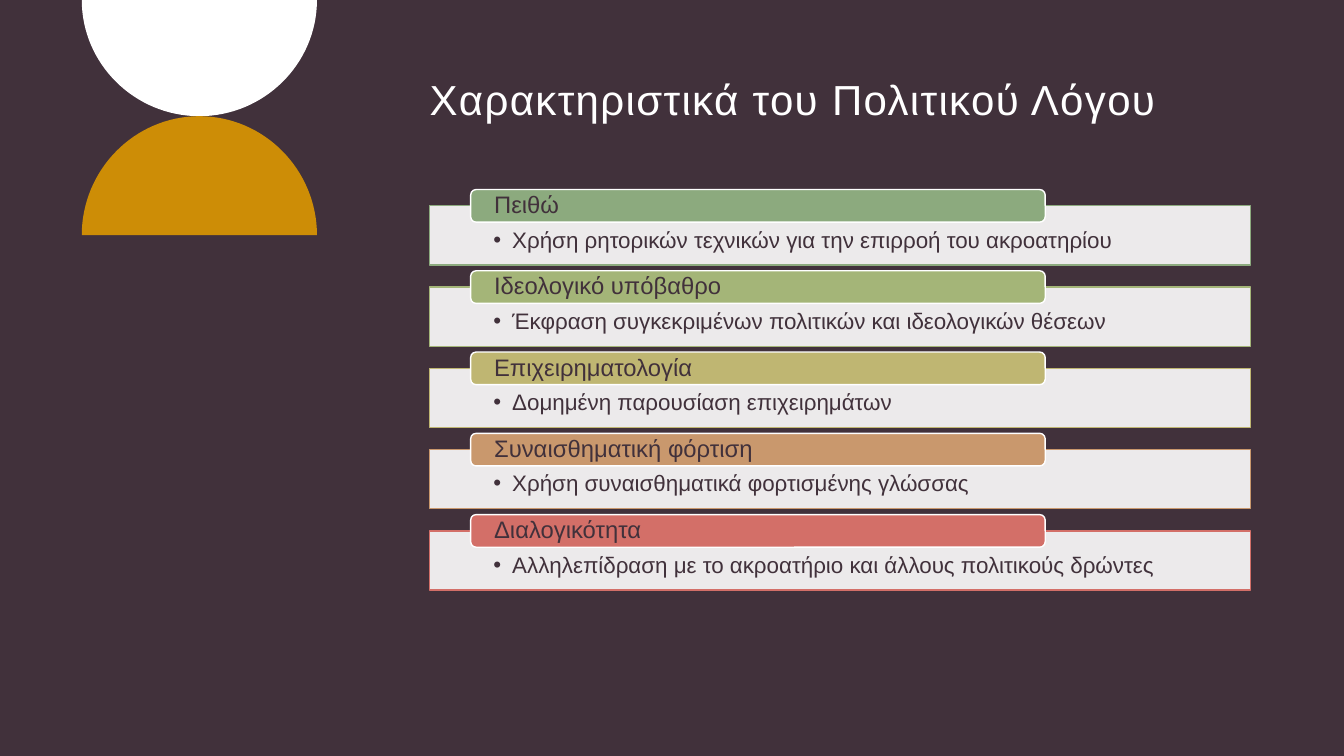
from lxml import etree
from pptx import Presentation
from pptx.dml.color import RGBColor
from pptx.enum.shapes import MSO_SHAPE
from pptx.enum.text import MSO_ANCHOR, MSO_AUTO_SIZE, PP_ALIGN
from pptx.oxml.ns import qn
from pptx.util import Pt

RECTANGLE = MSO_SHAPE.RECTANGLE
ROUNDED = MSO_SHAPE.ROUNDED_RECTANGLE
TOP = MSO_ANCHOR.TOP
MIDDLE = MSO_ANCHOR.MIDDLE
LEFT = PP_ALIGN.LEFT
NO_AUTOFIT = MSO_AUTO_SIZE.NONE

FONT = "Arial"
COLORS = {
    "plum": "41313B",
    "white": "FFFFFF",
    "gold": "CD8D06",
    "green": "8CAA7E",
    "olive": "A4B578",
    "sand": "BFB672",
    "copper": "C9986D",
    "coral": "D36F68",
}
TITLE = "Χαρακτηριστικά του Πολιτικού Λόγου"
FEATURES = [
    ("Πειθώ", "Χρήση ρητορικών τεχνικών για την επιρροή του ακροατηρίου", "green"),
    ("Ιδεολογικό υπόβαθρο", "Έκφραση συγκεκριμένων πολιτικών και ιδεολογικών θέσεων", "olive"),
    ("Επιχειρηματολογία", "Δομημένη παρουσίαση επιχειρημάτων", "sand"),
    ("Συναισθηματική φόρτιση", "Χρήση συναισθηματικά φορτισμένης γλώσσας", "copper"),
    ("Διαλογικότητα", "Αλληλεπίδραση με το ακροατήριο και άλλους πολιτικούς δρώντες", "coral"),
]


def color(name):
    """Return the named palette colour."""
    return RGBColor.from_string(COLORS[name])


def paint(shape, fill, line=None):
    """Give a shape a solid fill, an optional outline and no shadow."""
    shape.shadow.inherit = False
    shape.fill.solid()
    shape.fill.fore_color.rgb = color(fill)
    if line:
        shape.line.color.rgb = color(line)
        shape.line.width = Pt(1)
    else:
        shape.line.fill.background()


def write(shape, text, size, ink, anchor, margins):
    """Set one left-aligned paragraph in a shape and return it."""
    frame = shape.text_frame
    frame.text = text
    frame.word_wrap = True
    frame.auto_size = NO_AUTOFIT
    frame.vertical_anchor = anchor
    frame.margin_left, frame.margin_top, frame.margin_right, frame.margin_bottom = map(Pt, margins)
    paragraph = frame.paragraphs[0]
    paragraph.alignment = LEFT
    paragraph.line_spacing = 0.9
    font = paragraph.runs[0].font
    font.name = FONT
    font.size = Pt(size)
    font.color.rgb = color(ink)
    return paragraph


def add_bullet(paragraph, indent):
    """Give a paragraph a hanging round bullet."""
    properties = paragraph._p.get_or_add_pPr()
    properties.set("marL", str(Pt(indent)))
    properties.set("indent", str(-Pt(indent)))
    etree.SubElement(properties, qn("a:buFont"), typeface=FONT)
    etree.SubElement(properties, qn("a:buChar"), char="•")


def curve_segments(shape):
    """Turn each three straight segments of a freeform into one Bézier curve."""
    lines = list(shape._element.iter(qn("a:lnTo")))
    for start in range(0, len(lines), 3):
        curve = etree.Element(qn("a:cubicBezTo"))
        lines[start].addprevious(curve)
        for line in lines[start:start + 3]:
            curve.append(line[0])
            line.getparent().remove(line)


def add_half_disc(slide, left, base, width, height, fill):
    """Draw half an ellipse on a base line, hanging down if height is positive."""
    pull = 0.55
    outline = [(0, 0), (0, pull), (0.5 - pull / 2, 1), (0.5, 1), (0.5 + pull / 2, 1), (1, pull), (1, 0)]
    points = [(Pt(left + x * width), Pt(base + y * height)) for x, y in outline]
    builder = slide.shapes.build_freeform(*points[0])
    builder.add_line_segments(points[1:], close=True)
    half_disc = builder.convert_to_shape()
    curve_segments(half_disc)
    paint(half_disc, fill)


def add_ornament(slide, left, top, width):
    """Stack a white bowl on a gold dome."""
    add_half_disc(slide, left, top, width, 83, "white")
    add_half_disc(slide, left, top + 168, width, -85, "gold")


def add_title(slide, left, top, width, height):
    """Place and format the title placeholder."""
    title = slide.shapes.title
    title.left, title.top, title.width, title.height = map(Pt, (left, top, width, height))
    paragraph = write(title, TITLE, 30, "white", TOP, (0, 0, 0, 0))
    paragraph.runs[0].font._element.set("spc", "100")


def add_feature(slide, left, top, width, height, feature):
    """Draw a panel with its description and the label overlapping its top edge."""
    heading, description, accent = feature
    panel = slide.shapes.add_shape(RECTANGLE, *map(Pt, (left, top, width, height)))
    paint(panel, "white", accent)
    solid = panel.fill._xPr.find(qn("a:solidFill"))
    etree.SubElement(solid[0], qn("a:alpha"), val="90000")
    paragraph = write(panel, description, 16, "plum", TOP, (45.5, 16.4, 45.5, 8.5))
    add_bullet(paragraph, 13.5)

    label = slide.shapes.add_shape(
        ROUNDED, *map(Pt, (left + width * 0.05, top - 11.6, width * 0.7, 23.3))
    )
    paint(label, accent, "white")
    write(label, heading, 17, "plum", MIDDLE, (15.6, 0, 15.6, 0))


def add_feature_list(slide, left, top, width, pitch):
    """Stack the features at an equal pitch."""
    for row, feature in enumerate(FEATURES):
        add_feature(slide, left, top + row * pitch, width, 42.3, feature)


def main():
    """Build the slide and save it."""
    presentation = Presentation()
    presentation.slide_width = Pt(960)
    presentation.slide_height = Pt(540)
    slide = presentation.slides.add_slide(presentation.slide_layouts[5])
    slide.background.fill.solid()
    slide.background.fill.fore_color.rgb = color("plum")
    add_ornament(slide, 58.4, 0, 168)
    add_title(slide, 306.9, 56.5, 573, 53)
    add_feature_list(slide, 306.9, 147, 586.3, 58.05)
    presentation.save("out.pptx")


if __name__ == "__main__":
    main()
